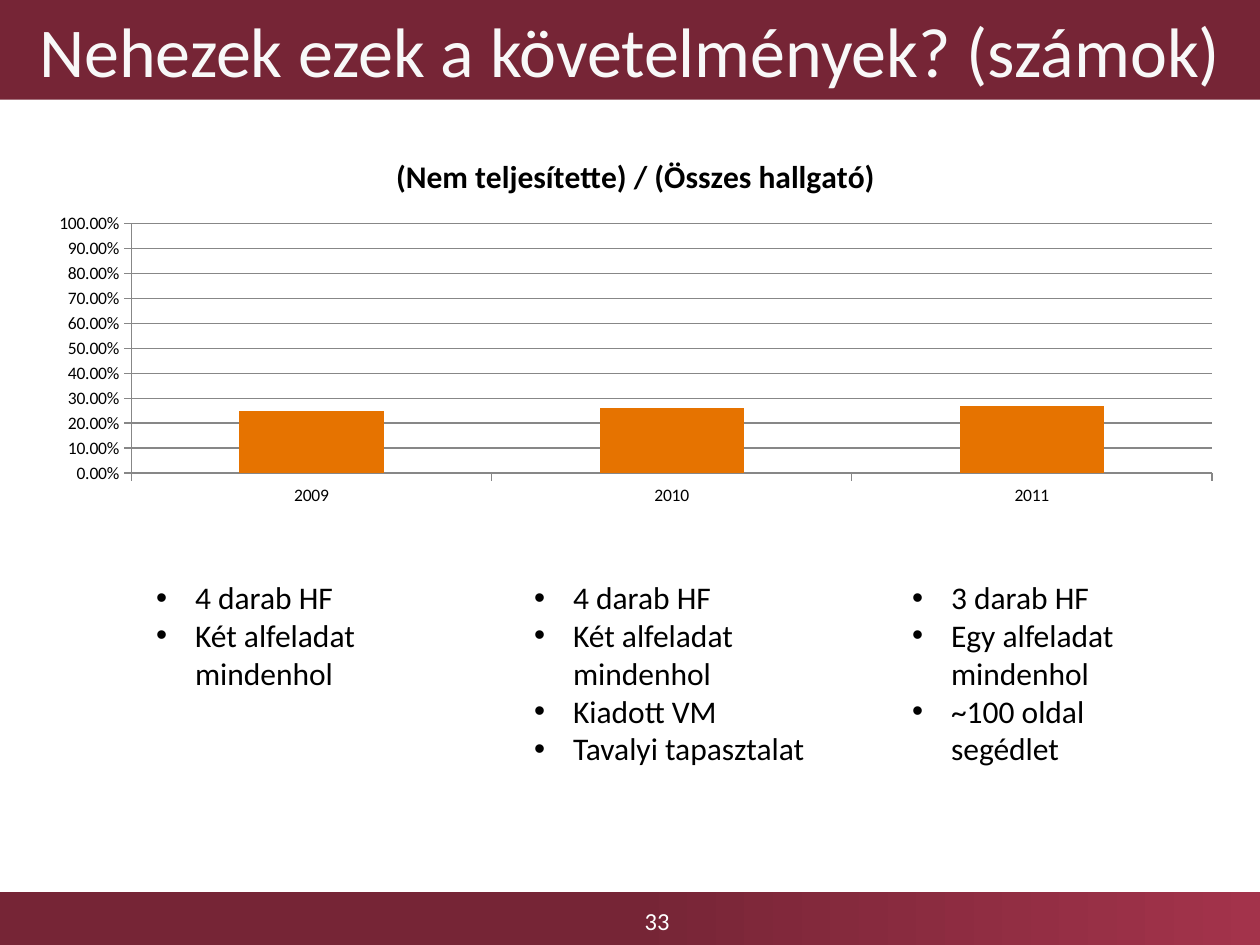
"""Build the slide on how many students missed the course requirements, 2009-2011."""
from lxml import etree
from pptx import Presentation
from pptx import util as u
from pptx.chart.data import CategoryChartData
from pptx.dml.color import RGBColor
from pptx.enum import chart as ch, shapes, text
from pptx.oxml.ns import qn

BURGUNDY = RGBColor(0x76, 0x25, 0x36)
CRIMSON = RGBColor(0xA3, 0x33, 0x4B)
ORANGE = RGBColor(0xE6, 0x73, 0x00)
GRAY = RGBColor(0x87, 0x87, 0x87)
OFF_WHITE = RGBColor(0xF8, 0xF8, 0xF8)
WHITE = RGBColor(0xFF, 0xFF, 0xFF)
BLACK = RGBColor(0, 0, 0)
FONT = "Calibri"


def style(font, size, color, bold=False):
    font.name, font.size, font.bold = FONT, u.Pt(size), bold
    font.color.rgb = color


def add_bullet(paragraph):
    props = paragraph._p.get_or_add_pPr()
    props.set("marL", str(u.Inches(0.31)))
    props.set("indent", str(-u.Inches(0.31)))
    etree.SubElement(props, qn("a:buFont")).set("typeface", "Arial")
    etree.SubElement(props, qn("a:buChar")).set("char", "•")


prs = Presentation()
prs.slide_width, prs.slide_height = u.Inches(10), u.Inches(7.5)
slide = prs.slides.add_slide(prs.slide_layouts[5])

footer = slide.shapes.add_shape(
    shapes.MSO_SHAPE.RECTANGLE, u.Inches(0), u.Inches(7.08), u.Inches(10), u.Inches(0.42))
footer.shadow.inherit = False
footer.line.fill.background()
footer.fill.gradient()
footer.fill.gradient_angle = 0
for stop, position, color in zip(footer.fill.gradient_stops, (0.5, 1), (BURGUNDY, CRIMSON)):
    stop.position, stop.color.rgb = position, color

page = slide.shapes.add_textbox(u.Inches(3.59), u.Inches(7.11), u.Inches(3.25), u.Inches(0.39))
page.text_frame.word_wrap = True
page.text_frame.vertical_anchor = text.MSO_ANCHOR.MIDDLE
page_line = page.text_frame.paragraphs[0]
page_line.alignment = text.PP_ALIGN.CENTER
page_number = page_line.add_run()
page_number.text = "33"
style(page_number.font, 14, WHITE)

title = slide.shapes.title
title.left, title.top = u.Inches(0), u.Inches(0)
title.width, title.height = u.Inches(10), u.Inches(0.79)
title.fill.solid()
title.fill.fore_color.rgb = BURGUNDY
title.text_frame.auto_size = text.MSO_AUTO_SIZE.NONE
title.text_frame.vertical_anchor = text.MSO_ANCHOR.MIDDLE
title_line = title.text_frame.paragraphs[0]
title_line.alignment = text.PP_ALIGN.CENTER
heading = title_line.add_run()
heading.text = "Nehezek ezek a követelmények? (számok)"
style(heading.font, 40, OFF_WHITE)

failures = CategoryChartData(number_format="0.00%")
failures.categories = ["2009", "2010", "2011"]
failures.add_series("(Nem teljesítette) / (Összes hallgató)", (0.25, 0.26, 0.27))
chart = slide.shapes.add_chart(
    ch.XL_CHART_TYPE.COLUMN_CLUSTERED, u.Inches(0.28), u.Inches(1.07),
    u.Inches(9.53), u.Inches(3), failures).chart
style(chart.font, 10, BLACK)
chart.has_legend = False
chart.has_title = True
chart.chart_title.include_in_layout = False
chart_heading = chart.chart_title.text_frame.paragraphs[0].add_run()
chart_heading.text = "(Nem teljesítette) / (Összes hallgató)"
style(chart_heading.font, 18, BLACK, bold=True)

plot = chart.plots[0]
plot.gap_width = 150
plot.vary_by_categories = False
bars = plot.series[0].format.fill
bars.solid()
bars.fore_color.rgb = ORANGE

years, share = chart.category_axis, chart.value_axis
share.minimum_scale, share.maximum_scale, share.major_unit = 0, 1, 0.1
share.has_major_gridlines = True
share.tick_labels.number_format = "0.00%"
share.tick_labels.number_format_is_linked = False
for axis in (years, share):
    axis.major_tick_mark = ch.XL_TICK_MARK.OUTSIDE
for line in (years.format.line, share.format.line, share.major_gridlines.format.line):
    line.color.rgb = GRAY
    line.width = u.Pt(0.75)

requirements = [
    (1.01, ["4 darab HF", "Két alfeladat mindenhol"]),
    (1.62, ["4 darab HF", "Két alfeladat mindenhol", "Kiadott VM", "Tavalyi tapasztalat"]),
    (1.62, ["3 darab HF", "Egy alfeladat mindenhol", "~100 oldal segédlet"]),
]
for column, (height, items) in enumerate(requirements):
    year_list = slide.shapes.add_textbox(
        u.Inches(1.14 + 3 * column), u.Inches(4.54), u.Inches(2.44), u.Inches(height))
    frame = year_list.text_frame
    frame.word_wrap = True
    frame.auto_size = text.MSO_AUTO_SIZE.SHAPE_TO_FIT_TEXT
    for index, item in enumerate(items):
        entry = frame.add_paragraph() if index else frame.paragraphs[0]
        add_bullet(entry)
        wording = entry.add_run()
        wording.text = item
        style(wording.font, 18, BLACK)

prs.save("out.pptx")
